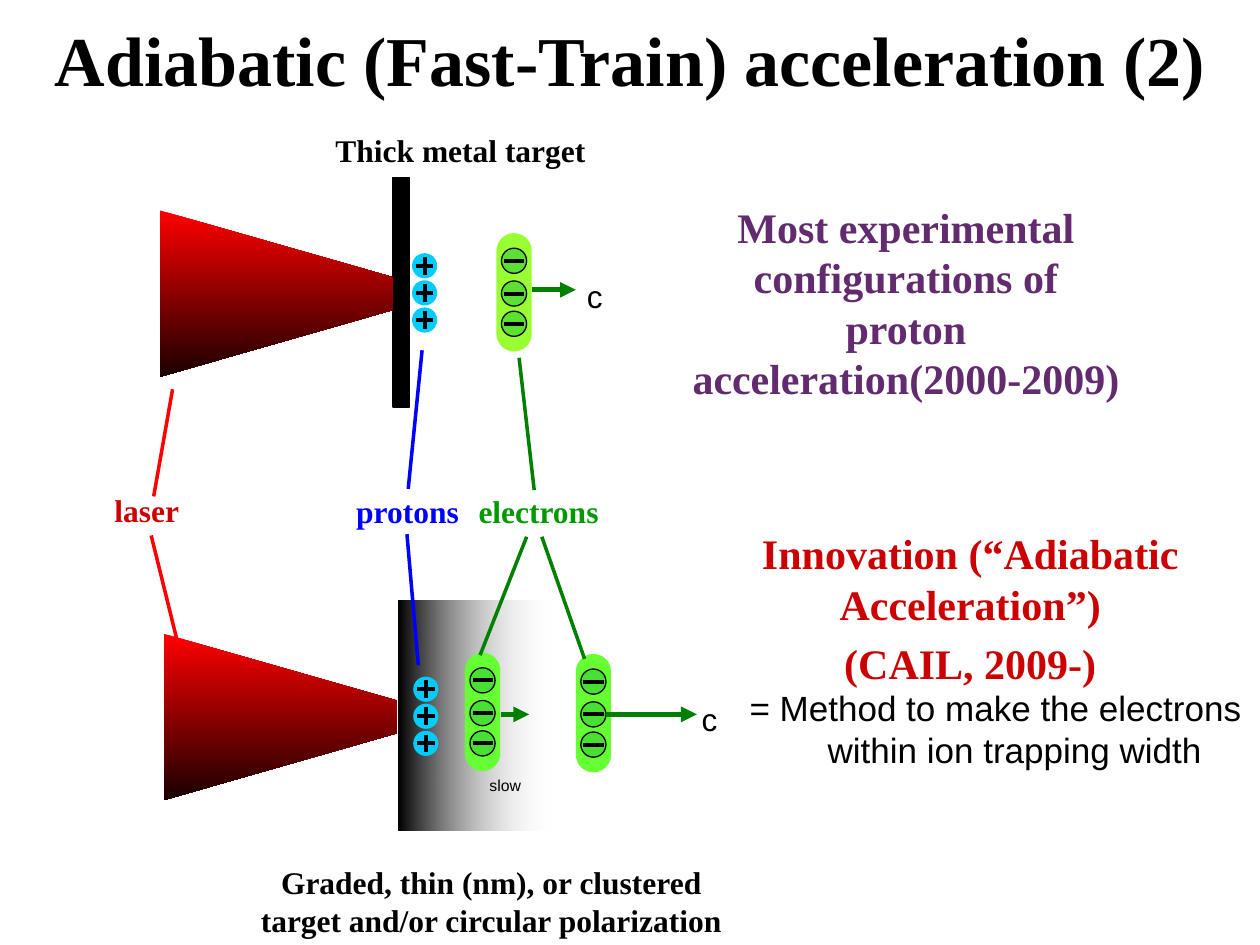
from lxml import etree
from pptx import Presentation
from pptx import util as u
from pptx.dml.color import RGBColor
from pptx.enum import shapes, text
from pptx.oxml.ns import qn

BLACK = RGBColor(0, 0, 0)
PALE = RGBColor(0xF1, 0xF1, 0xF1)
DARK = RGBColor(0x1A, 0, 0)
RED = RGBColor(0xFF, 0, 0)
BRICK = RGBColor(0xCC, 0, 0)
BLUE = RGBColor(0, 0, 0xFF)
CYAN = RGBColor(0, 0xCC, 0xFF)
GREEN = RGBColor(0, 0x80, 0)
LEAF = RGBColor(0, 0x99, 0)
MOSS = RGBColor(0x33, 0xCC, 0x33)
LIME = RGBColor(0x99, 0xFF, 0x33)
FRESH = RGBColor(0x66, 0xFF, 0x33)
PLUM = RGBColor(0x62, 0x2B, 0x6F)
SERIF, SANS = "Times New Roman", "Arial"
MID, LEFT = text.PP_ALIGN.CENTER, text.PP_ALIGN.LEFT
KIND = shapes.MSO_SHAPE

BEAMS = [(1.27, 1.67), (1.3, 5.03)]
PROTONS = [(3.27, 2.01), (3.28, 5.37)]
CLOUDS = [(3.94, 1.85, LIME), (3.69, 5.18, FRESH), (4.57, 5.19, FRESH)]
ARROWS = [(4.22, 2.3, 4.57), (4.81, 5.67, 5.53), (3.98, 5.67, 4.2)]
LEADS = [
    (4.12, 2.84, 4.24, 3.89, GREEN),
    (4.18, 4.26, 3.81, 5.2, GREEN),
    (4.3, 4.26, 4.64, 5.23, GREEN),
    (3.35, 2.78, 3.24, 3.88, BLUE),
    (3.23, 4.24, 3.32, 5.28, BLUE),
    (1.37, 3.09, 1.22, 3.94, RED),
    (1.2, 4.25, 1.41, 5.1, RED),
]
HEADS = [
    ((0, 0.08, 10, 0.77), 40, BLACK, ["Adiabatic (Fast-Train) acceleration (2)"]),
    ((2.46, 0.99, 2.39, 0.4), 18, BLACK, ["Thick metal target"]),
    ((0.45, 3.85, 1.43, 0.4), 18, BRICK, ["laser"]),
    ((2.52, 3.86, 1.43, 0.4), 18, BLUE, ["protons"]),
    ((3.56, 3.86, 1.43, 0.4), 18, LEAF, ["electrons"]),
    ((1.93, 6.8, 3.94, 0.7), 18, BLACK,
     ["Graded, thin (nm), or clustered target and/or circular polarization"]),
    ((5.39, 1.55, 3.6, 1.7), 24, PLUM,
     ["Most experimental configurations of proton acceleration(2000-2009)"]),
    ((5.79, 4.14, 3.82, 1.39), 24, BRICK,
     ["Innovation (“Adiabatic Acceleration”)", "(CAIL, 2009-)"]),
]
SPEEDS = [(4.56, 2.15, 0.31, 0.4), (5.47, 5.51, 0.31, 0.4)]
METHOD = [("= Method to make the electrons", 0.3),
          ("within ion trapping width", 0.92)]

deck = Presentation()
deck.slide_width, deck.slide_height = u.Inches(10), u.Inches(7.5)
page = deck.slides.add_slide(deck.slide_layouts[6]).shapes


def inch(*vals):
    return [u.Inches(v) for v in vals]


def fade(item, first, last, angle):
    item.fill.gradient()
    item.fill.gradient_angle = angle
    for stop, tint in zip(item.fill.gradient_stops, (first, last)):
        stop.color.rgb = tint


def alpha(item, share):
    tint = item._element.spPr.findall(".//" + qn("a:srgbClr"))[-1]
    etree.SubElement(tint, qn("a:alpha"), val=str(share * 1000))


def block(kind, box, tint):
    item = page.add_shape(kind, *inch(*box))
    item.shadow.inherit = False
    item.fill.solid()
    item.fill.fore_color.rgb = tint
    item.line.fill.background()
    return item


def edge(item, tint, size):
    item.line.color.rgb = tint
    item.line.width = u.Pt(size)


def line(x, y, right, low, tint, size, tip=False):
    item = page.add_connector(shapes.MSO_CONNECTOR.STRAIGHT, *inch(x, y, right, low))
    edge(item, tint, size)
    if tip:
        etree.SubElement(item.line._get_or_add_ln(), qn("a:tailEnd"), type="triangle")
    etree.SubElement(item._element.spPr, qn("a:effectLst"))


def write(box, rows, size, tint, font, bold=False, align=MID, gap=0):
    item = page.add_textbox(*inch(*box))
    frame = item.text_frame
    frame.word_wrap = True
    for at, row in enumerate(rows):
        para = frame.paragraphs[0] if at == 0 else frame.add_paragraph()
        para.alignment = align
        if at:
            para.space_before = u.Pt(gap)
        run = para.add_run()
        run.text = row
        run.font.name, run.font.size, run.font.bold = font, u.Pt(size), bold
        run.font.color.rgb = tint
    return frame


def beam(x, y):
    pen = page.build_freeform(*inch(x, y), scale=1)
    ends = [(x + 1.85, y + 0.53), (x + 1.85, y + 0.79), (x, y + 1.32)]
    pen.add_line_segments([inch(*end) for end in ends], close=True)
    item = pen.convert_to_shape()
    item.shadow.inherit = False
    fade(item, RED, DARK, 270)
    item.line.fill.background()


def proton(x, y):
    block(KIND.OVAL, (x, y, 0.2, 0.2), CYAN)
    line(x + 0.03, y + 0.1, x + 0.17, y + 0.1, BLACK, 2.25)
    line(x + 0.1, y + 0.03, x + 0.1, y + 0.17, BLACK, 2.25)


def cloud(x, y, tint):
    block(KIND.ROUNDED_RECTANGLE, (x, y, 0.28, 0.94), tint).adjustments[0] = 0.5
    for drop in (0.12, 0.38, 0.62):
        ball = block(KIND.OVAL, (x + 0.04, y + drop, 0.2, 0.2), MOSS)
        alpha(ball, 60)
        edge(ball, BLACK, 0.75)
        mid = y + drop + 0.1
        line(x + 0.06, mid, x + 0.22, mid, BLACK, 2.25)


edge(block(KIND.RECTANGLE, (3.12, 1.41, 0.13, 1.82), BLACK), BLACK, 0.75)
foil = block(KIND.RECTANGLE, (3.16, 4.77, 1.21, 1.82), BLACK)
fade(foil, BLACK, PALE, 0)
alpha(foil, 0)

for spot in BEAMS:
    beam(*spot)
for x, y in PROTONS:
    for row in range(3):
        proton(x, y + row * 0.215)
for spot in CLOUDS:
    cloud(*spot)
for x, y, right in ARROWS:
    line(x, y, right, y, GREEN, 3, True)
for box in SPEEDS:
    write(box, ["c"], 18, BLACK, SANS, align=LEFT)

slow = write((3.83, 6.16, 0.36, 0.16), ["slow"], 9, BLACK, SANS)
slow.word_wrap = False
slow.margin_left = slow.margin_right = slow.margin_top = slow.margin_bottom = 0

for box, size, tint, rows in HEADS:
    write(box, rows, size, tint, SERIF, True, gap=size * 0.2)
for lead in LEADS:
    line(*lead, 2)

note = write((5.55, 5.4, 4.72, 1.45), [row for row, _ in METHOD],
             20, BLACK, SANS, align=LEFT)
for para, (_, indent) in zip(note.paragraphs, METHOD):
    para._p.get_or_add_pPr().set("marL", str(u.Inches(indent)))

deck.save("out.pptx")
